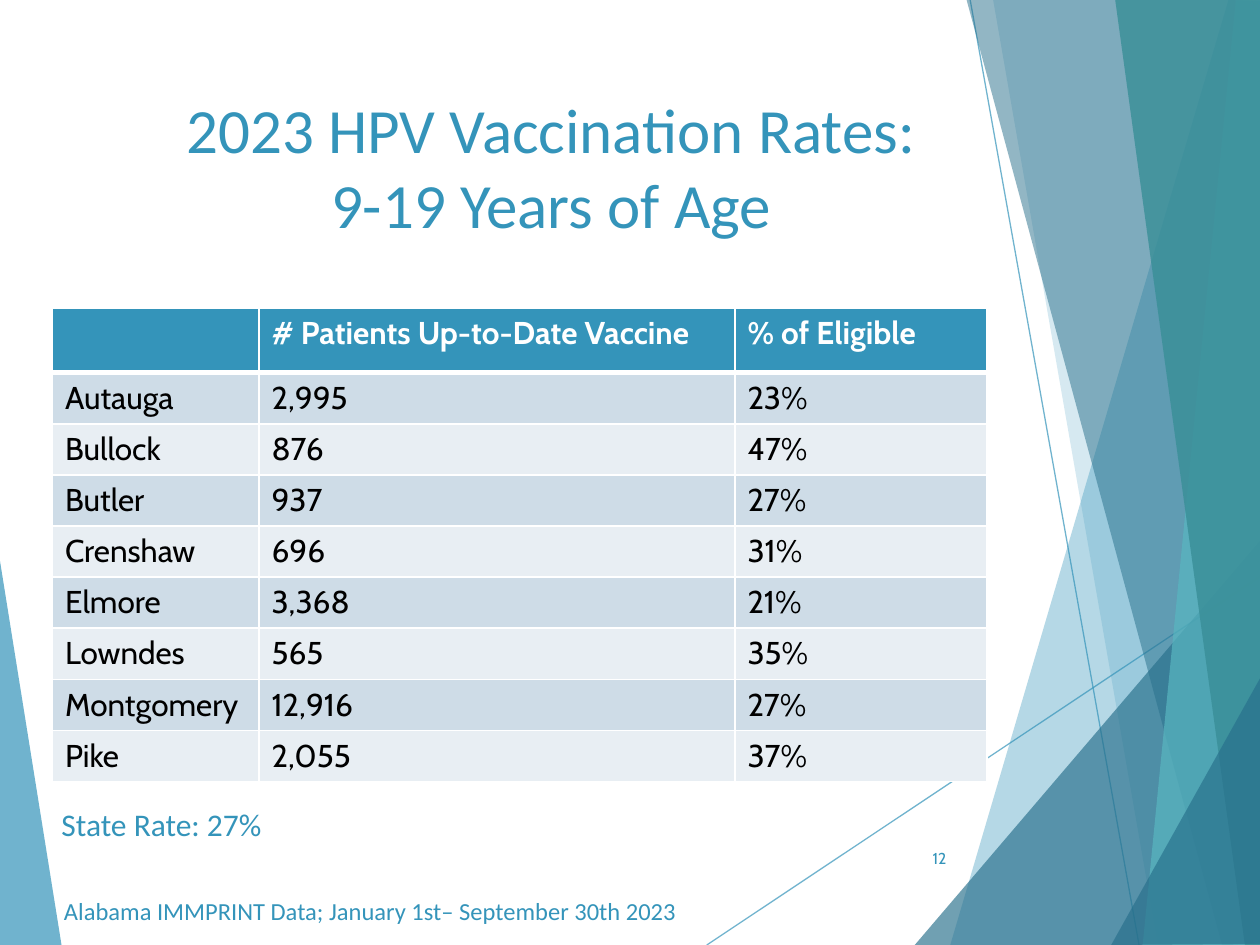
from lxml.etree import SubElement
from pptx import Presentation
from pptx.dml.color import RGBColor as RGB
from pptx.enum.shapes import MSO_CONNECTOR as CONN
from pptx.enum.text import MSO_ANCHOR as ANCHOR, PP_ALIGN as ALIGN
from pptx.oxml.ns import qn
from pptx.util import Pt

COLORS = {
    "blue": "3494BA", "navy": "276F8B", "aqua": "58B6C0", "teal": "3A8F98",
    "white": "FFFFFF", "black": "000000", "band": "CEDCE7", "pale": "E8EEF3",
}
WEDGES = [
    ("blue", 70, [(-0.7, 316), (35.3, 540.7), (-0.7, 540)]),
    ("blue", 36, [(702, 0), (543, 540), (721, 540.7), (720.7, 0.7)]),
    ("blue", 20, [(567.4, -0.7), (661.7, 540), (720.7, 540), (720.7, -0.7)]),
    ("navy", 66, [(522.7, 540), (720, 309), (720.7, 540)]),
    ("navy", 50, [(552.2, -0.7), (698.4, 540), (720.7, 539.3), (720.7, -0.7)]),
    ("aqua", 70, [(706.3, -0.7), (653, 540), (720.7, 540), (720, -0.7)]),
    ("teal", 82, [(637.2, -0.7), (711.4, 540), (721.4, 540), (720, -0.7)]),
    ("navy", 66, [(635, 540), (721.4, 385.2), (721.4, 539.3)]),
]
LINES = [((403.9, 540), (720.7, 329)), ((554.4, 0), (650.9, 540))]
RATES = [
    ("", "# Patients Up-to-Date Vaccine", "% of Eligible"),
    ("Autauga", "2,995", "23%"),
    ("Bullock", "876", "47%"),
    ("Butler", "937", "27%"),
    ("Crenshaw", "696", "31%"),
    ("Elmore", "3,368", "21%"),
    ("Lowndes", "565", "35%"),
    ("Montgomery", "12,916", "27%"),
    ("Pike", "2,055", "37%"),
]


def write(tf, text, size=18, font="Calibri", color="blue", bold=False,
          align=ALIGN.LEFT, anchor=ANCHOR.TOP):
    tf.word_wrap = True
    tf.vertical_anchor = anchor
    p = tf.paragraphs[0]
    p.alignment = align
    for i, line in enumerate(text.split("\n")):
        if i:
            p.add_line_break()
        r = p.add_run()
        r.text = line
        r.font.size = Pt(size)
        r.font.name = font
        r.font.bold = bold
        r.font.color.rgb = RGB.from_string(COLORS[color])


def paint(fill, color, alpha=100):
    fill.solid()
    fill.fore_color.rgb = RGB.from_string(COLORS[color])
    if alpha < 100:
        clr = fill._xPr.find(qn("a:solidFill"))[0]
        SubElement(clr, qn("a:alpha"), val=str(alpha * 1000))


class Deck:
    def __init__(self, width, height):
        self.prs = Presentation()
        self.prs.slide_width, self.prs.slide_height = Pt(width), Pt(height)
        self.s = self.prs.slides.add_slide(self.prs.slide_layouts[5])

    def wedge(self, color, alpha, points):
        pts = [(Pt(x), Pt(y)) for x, y in points]
        builder = self.s.shapes.build_freeform(*pts[0], scale=1.0)
        builder.add_line_segments(pts[1:], close=True)
        sp = builder.convert_to_shape()
        sp.shadow.inherit = False
        sp.line.fill.background()
        paint(sp.fill, color, alpha)

    def line(self, start, end):
        ends = [Pt(v) for v in (*start, *end)]
        cx = self.s.shapes.add_connector(CONN.STRAIGHT, *ends)
        cx.line.width = Pt(0.75)
        paint(cx.line.fill, "blue", 70)
        SubElement(cx._element.spPr, qn("a:effectLst"))

    def title(self, box, text, **fmt):
        sp = self.s.shapes.title
        self.s.shapes._spTree.append(sp._element)
        sp.left, sp.top, sp.width, sp.height = [Pt(v) for v in box]
        write(sp.text_frame, text, **fmt)

    def text(self, box, text, **fmt):
        sp = self.s.shapes.add_textbox(*[Pt(v) for v in box])
        write(sp.text_frame, text, **fmt)

    def borders(self, cell, widths):
        tcPr = cell._tc.get_or_add_tcPr()
        for side, width in zip("LRTB", widths):
            ln = SubElement(tcPr, qn("a:ln" + side), w=str(Pt(width)))
            solid = SubElement(ln, qn("a:solidFill"))
            SubElement(solid, qn("a:srgbClr"), val=COLORS["white"])

    def table(self, left, top, widths, heights, rows):
        frame = self.s.shapes.add_table(
            len(rows), len(widths), Pt(left), Pt(top),
            Pt(sum(widths)), Pt(sum(heights)))
        tbl = frame.table
        for col, width in zip(tbl.columns, widths):
            col.width = Pt(width)
        for i, (row, height) in enumerate(zip(rows, heights)):
            tbl.rows[i].height = Pt(height)
            head = i == 0
            fill = "blue" if head else ("pale", "band")[i % 2]
            for j, value in enumerate(row):
                cell = tbl.cell(i, j)
                self.borders(cell, (1, 1, 3 if i == 1 else 1, 3 if head else 1))
                paint(cell.fill, fill)
                write(cell.text_frame, value, font="Cabin", bold=head,
                      color="white" if head else "black")


def main():
    deck = Deck(720, 540)
    deck.wedge(*WEDGES[0])
    for start, end in LINES:
        deck.line(start, end)
    for wedge in WEDGES[1:]:
        deck.wedge(*wedge)
    deck.title((48, 48, 534, 104), "2023 HPV Vaccination Rates:\n9-19 Years of Age",
               size=36, align=ALIGN.CENTER)
    deck.table(30, 176, (118, 272, 144), [37] + [29.2] * 8, RATES)
    deck.text((507.6, 476, 40.3, 28.8), "12", size=9, font="Cabin",
              align=ALIGN.RIGHT, anchor=ANCHOR.MIDDLE)
    deck.text((28, 456.5, 414, 51), "State Rate: 27%")
    deck.text((29.5, 508.3, 477.4, 24.5),
              "Alabama IMMPRINT Data; January 1st– September 30th 2023", size=14)
    deck.prs.save("out.pptx")


if __name__ == "__main__":
    main()
